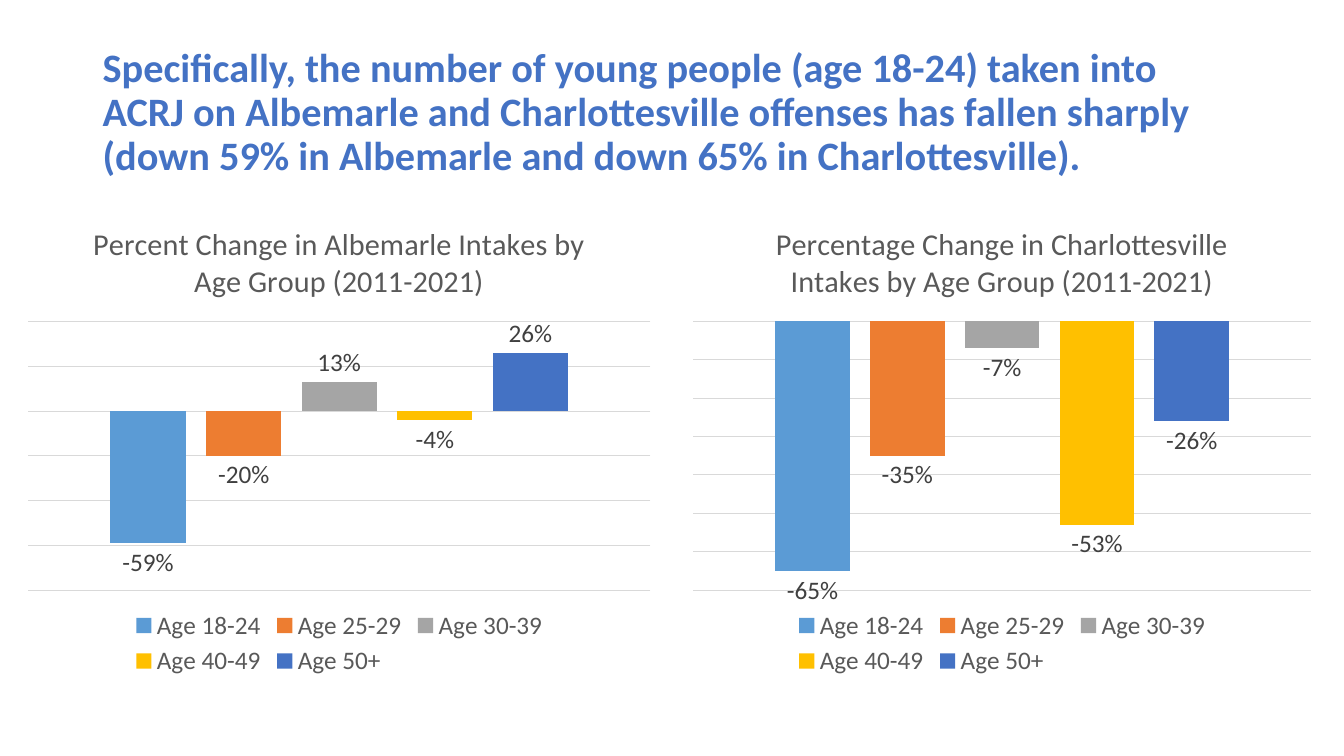
from dataclasses import dataclass

from lxml import etree
from pptx import Presentation
from pptx.chart.data import CategoryChartData as ChartData
from pptx.dml.color import RGBColor as Rgb
from pptx.enum.chart import XL_CHART_TYPE as ChartType
from pptx.enum.chart import XL_LABEL_POSITION as LabelPosition
from pptx.enum.chart import XL_LEGEND_POSITION as LegendPosition
from pptx.enum.text import MSO_ANCHOR as Anchor
from pptx.oxml.ns import qn
from pptx.util import Inches, Pt


@dataclass(frozen=True)
class Theme:
    font: str = "Calibri"
    heading: str = "4472C4"
    muted: str = "595959"
    label: str = "404040"
    grid: str = "D9D9D9"
    series: tuple = ("5B9BD5", "ED7D31", "A5A5A5", "FFC000", "4472C4")
    heading_size: float = 28.8
    chart_title_size: float = 21.6
    chart_size: float = 18


AGE_GROUPS = ("Age 18-24", "Age 25-29", "Age 30-39", "Age 40-49", "Age 50+")
HEADING = (
    "Specifically, the number of young people (age 18-24) taken into ACRJ on "
    "Albemarle and Charlottesville offenses has fallen sharply (down 59% in "
    "Albemarle and down 65% in Charlottesville)."
)
CHARTS = (
    {
        "title": "Percent Change in Albemarle Intakes by Age Group (2011-2021)",
        "left": 0.15, "width": 6.43,
        "changes": (-0.59, -0.2, 0.13, -0.04, 0.26),
        "scale": {"minimum_scale": -0.8, "maximum_scale": 0.4, "major_unit": 0.2},
    },
    {
        "title": "Percentage Change in Charlottesville Intakes by Age Group (2011-2021)",
        "left": 6.75, "width": 6.38,
        "changes": (-0.65, -0.35, -0.07, -0.53, -0.26),
        "scale": {"minimum_scale": -0.7, "maximum_scale": 0, "major_unit": 0.1},
    },
)
PLOT_FRAME = {"x": 0.02, "y": 0.25, "w": 0.96, "h": 0.56}


def set_all(target, values):
    for name, value in values.items():
        setattr(target, name, value)


class SlideBuilder:
    def __init__(self, slide, theme):
        self.slide = slide
        self.theme = theme

    def style_font(self, font, size, color, bold=False):
        set_all(font, {"name": self.theme.font, "size": Pt(size), "bold": bold})
        font.color.rgb = Rgb.from_string(color)

    def heading(self, text, left, top, width, height):
        box = self.slide.shapes.add_textbox(
            Inches(left), Inches(top), Inches(width), Inches(height))
        frame = box.text_frame
        set_all(frame, {"word_wrap": True, "vertical_anchor": Anchor.MIDDLE})
        para = frame.paragraphs[0]
        para.line_spacing = 0.9
        span = para.add_run()
        span.text = text
        self.style_font(span.font, self.theme.heading_size, self.theme.heading, True)

    def column_chart(self, title, left, width, changes, scale, top=2, height=4.76):
        data = ChartData(number_format="0%")
        data.categories = ["1"]
        for group, change in zip(AGE_GROUPS, changes):
            data.add_series(group, [change])
        chart = self.slide.shapes.add_chart(
            ChartType.COLUMN_CLUSTERED, Inches(left), Inches(top),
            Inches(width), Inches(height), data).chart
        self.style_font(chart.font, self.theme.chart_size, self.theme.muted)
        self.chart_title(chart, title)
        self.axes(chart, scale)
        self.columns(chart.plots[0])
        self.legend(chart)
        self.place_plot(chart)

    def chart_title(self, chart, text):
        chart.has_title = True
        chart.chart_title.include_in_layout = False
        span = chart.chart_title.text_frame.paragraphs[0].add_run()
        span.text = text
        self.style_font(span.font, self.theme.chart_title_size, self.theme.muted)

    def axes(self, chart, scale):
        chart.category_axis.visible = False
        axis = chart.value_axis
        set_all(axis, {"visible": False, "has_major_gridlines": True, **scale})
        line = axis.major_gridlines.format.line
        line.width = Pt(0.75)
        line.color.rgb = Rgb.from_string(self.theme.grid)

    def columns(self, plot):
        set_all(plot, {"gap_width": 219, "overlap": -27, "vary_by_categories": False})
        for series, color in zip(plot.series, self.theme.series):
            series.invert_if_negative = False
            series.format.fill.solid()
            series.format.fill.fore_color.rgb = Rgb.from_string(color)
            labels = series.data_labels
            set_all(labels, {
                "show_value": True, "number_format": "0%",
                "number_format_is_linked": False,
                "position": LabelPosition.OUTSIDE_END,
            })
            self.style_font(labels.font, self.theme.chart_size, self.theme.label)

    def legend(self, chart):
        chart.has_legend = True
        set_all(chart.legend, {
            "position": LegendPosition.BOTTOM, "include_in_layout": False})
        self.style_font(chart.legend.font, self.theme.chart_size, self.theme.muted)

    def place_plot(self, chart):
        """Fix the inner plot area as fractions of the chart frame."""
        area = chart.plots[0]._element.getparent()
        layout = area.find(qn("c:layout"))
        if layout is None:
            layout = etree.Element(qn("c:layout"))
            area.insert(0, layout)
        manual = etree.SubElement(layout, qn("c:manualLayout"))
        settings = {"layoutTarget": "inner", "xMode": "edge", "yMode": "edge", **PLOT_FRAME}
        for tag, value in settings.items():
            etree.SubElement(manual, qn(f"c:{tag}")).set("val", str(value))


def main():
    deck = Presentation()
    set_all(deck, {"slide_width": Inches(13.33), "slide_height": Inches(7.5)})
    page = SlideBuilder(deck.slides.add_slide(deck.slide_layouts[6]), Theme())
    page.heading(HEADING, 0.92, 0.4, 11.5, 1.45)
    for chart in CHARTS:
        page.column_chart(**chart)
    deck.save("out.pptx")


if __name__ == "__main__":
    main()
